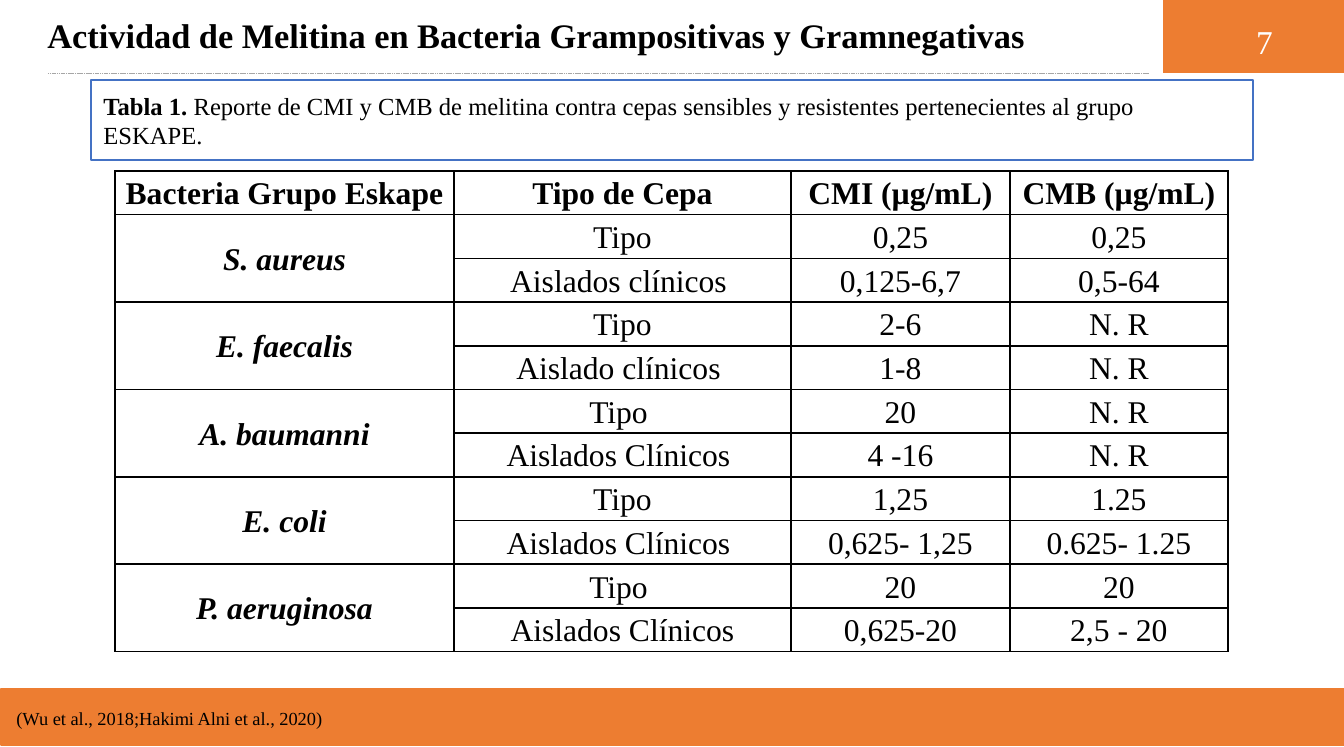
from lxml import etree
from pptx import Presentation
from pptx import util as u
from pptx.dml.color import RGBColor
from pptx.enum import dml, shapes, text
from pptx.oxml import ns

EMU_PER_PX = 7234
FONT = "Times New Roman"
ORANGE, BLUE, BLACK, WHITE, GREY = "ED7D31", "4472C4", "000000", "FFFFFF", "A6A6A6"
CENTER = text.PP_ALIGN.CENTER
MIDDLE = text.MSO_ANCHOR.MIDDLE
HEADERS = ["Bacteria Grupo Eskape", "Tipo de Cepa", "CMI (µg/mL)", "CMB (µg/mL)"]
BACTERIA = [
    ("S. aureus", ("Tipo", "0,25", "0,25"), ("Aislados clínicos ", "0,125-6,7", "0,5-64")),
    ("E. faecalis", ("Tipo", "2-6", "N. R"), ("Aislado clínicos ", "1-8", "N. R")),
    ("A. baumanni", ("Tipo ", "20", "N. R"), ("Aislados Clínicos ", "4 -16", "N. R")),
    ("E. coli", ("Tipo", "1,25", "1.25"), ("Aislados Clínicos ", "0,625- 1,25", "0.625- 1.25")),
    ("P. aeruginosa", ("Tipo ", "20", "20"), ("Aislados Clínicos", "0,625-20", "2,5 - 20")),
]


def px(length):
    return u.Emu(length * EMU_PER_PX)


def color(value):
    return RGBColor.from_string(value)


def add_span(para, words, size=18, fill=BLACK, bold=False, italic=False):
    span = para.add_run()
    span.text = words
    font = span.font
    font.name, font.size, font.bold, font.italic = FONT, u.Pt(size), bold, italic
    font.color.rgb = color(fill)


def format_para(para, align=text.PP_ALIGN.LEFT, spacing=1.0, after=0):
    para.alignment = align
    para.line_spacing = spacing
    para.space_after = u.Pt(after)
    return para


def add_label(page, place, words, anchor=text.MSO_ANCHOR.TOP, align=text.PP_ALIGN.LEFT,
              spacing=1.0, after=0, **style):
    box = page.shapes.add_textbox(*map(px, place))
    box.text_frame.word_wrap = True
    box.text_frame.vertical_anchor = anchor
    add_span(format_para(box.text_frame.paragraphs[0], align, spacing, after), words, **style)


def add_box(page, place, fill, line=None, kind=shapes.MSO_SHAPE.RECTANGLE):
    box = page.shapes.add_shape(kind, *map(px, place))
    box.shadow.inherit = False
    box.fill.solid()
    box.fill.fore_color.rgb = color(fill)
    if line:
        box.line.color.rgb = color(line)
        box.line.width = u.Pt(1)
    else:
        box.line.fill.background()
    return box


def add_rule(page, start, end):
    rule = page.shapes.add_connector(shapes.MSO_CONNECTOR.STRAIGHT, *map(px, start + end))
    rule.line.color.rgb = color(GREY)
    rule.line.width = u.Pt(0.25)
    rule.line.dash_style = dml.MSO_LINE.SQUARE_DOT
    dash = rule.line._ln.find(ns.qn("a:prstDash"))
    dash.set("val", "sysDash")
    etree.SubElement(rule._element.spPr, ns.qn("a:effectLst"))


def add_caption(page):
    box = add_box(page, (91, 80, 1162, 80), WHITE, BLUE, shapes.MSO_SHAPE.ROUNDED_RECTANGLE)
    box.adjustments[0] = 0
    box.text_frame.word_wrap = True
    box.text_frame.vertical_anchor = MIDDLE
    para = format_para(box.text_frame.paragraphs[0])
    add_span(para, "Tabla 1.", size=14, bold=True)
    add_span(para, " Reporte de CMI y CMB de melitina contra cepas sensibles y resistentes "
                   "pertenecientes al grupo ESKAPE.", size=14)


def format_cell(cell):
    properties = cell._tc.get_or_add_tcPr()
    for side in ("lnL", "lnR", "lnT", "lnB"):
        border = etree.SubElement(properties, ns.qn(f"a:{side}"), w=str(u.Pt(1)))
        fill = etree.SubElement(border, ns.qn("a:solidFill"))
        etree.SubElement(fill, ns.qn("a:srgbClr"), val=BLACK)
    cell.fill.solid()
    cell.fill.fore_color.rgb = color(WHITE)
    cell.vertical_anchor = MIDDLE
    cell.margin_left = cell.margin_right = px(9)
    cell.margin_top = cell.margin_bottom = 0


def fill_cell(cell, words, **style):
    para = format_para(cell.text_frame.paragraphs[0], CENTER, 1.07, 8)
    add_span(para, words, **style)


def add_results(page):
    rows = 1 + 2 * len(BACTERIA)
    table = page.shapes.add_table(rows, len(HEADERS), *map(px, (115, 171, 1113, 481))).table
    for column, width in zip(table.columns, (339, 337, 219, 218)):
        column.width = px(width)
    for row in table.rows:
        row.height = px(481) // rows
    for cell in table.iter_cells():
        format_cell(cell)
    for column, header in enumerate(HEADERS):
        fill_cell(table.cell(0, column), header, bold=True)
    for group, (name, *strains) in enumerate(BACTERIA):
        top = 1 + 2 * group
        table.cell(top, 0).merge(table.cell(top + 1, 0))
        fill_cell(table.cell(top, 0), name, bold=True, italic=True)
        for row, values in enumerate(strains, top):
            for column, value in enumerate(values, 1):
                fill_cell(table.cell(row, column), value)


def main():
    deck = Presentation()
    deck.slide_width, deck.slide_height = px(1344), px(747)
    page = deck.slides.add_slide(deck.slide_layouts[6])
    add_rule(page, (48, 73), (1148, 73))
    add_box(page, (1163, 0, 181, 73), ORANGE)
    add_label(page, (35, 11, 1073, 57),
              "Actividad de Melitina en Bacteria Grampositivas y Gramnegativas",
              anchor=MIDDLE, spacing=0.7, size=19.6, bold=True)
    add_results(page)
    add_label(page, (1230, 15, 69, 53), "7", align=CENTER, size=19, fill=WHITE)
    add_caption(page)
    add_box(page, (1, 689, 1343, 56), ORANGE, ORANGE)
    add_label(page, (4, 699, 777, 35), "(Wu et al., 2018;Hakimi Alni et al., 2020)",
              spacing=1.07, after=8, size=10.5)
    deck.save("out.pptx")


if __name__ == "__main__":
    main()
